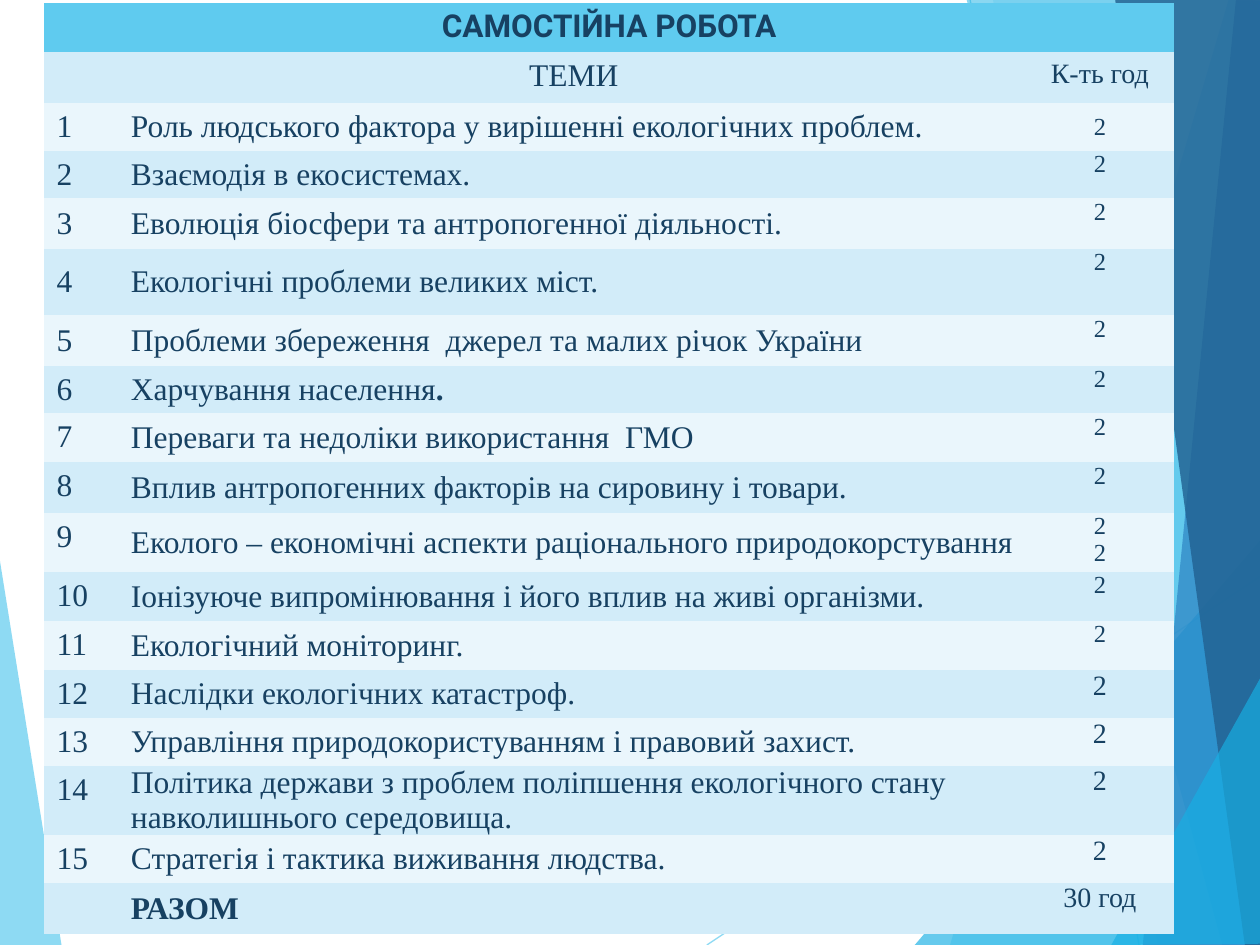
from dataclasses import dataclass

import lxml.etree
import pptx
import pptx.dml.color
import pptx.enum.shapes
import pptx.enum.text
import pptx.oxml.ns
import pptx.util

RGBColor = pptx.dml.color.RGBColor
Align = pptx.enum.text.PP_ALIGN
Anchor = pptx.enum.text.MSO_ANCHOR
qn = pptx.oxml.ns.qn

SKY = RGBColor(0x5F, 0xCB, 0xEF)
CYAN = RGBColor(0x17, 0xB0, 0xE4)
BLUE = RGBColor(0x2E, 0x83, 0xC3)
NAVY = RGBColor(0x22, 0x62, 0x92)
INK = RGBColor(0x17, 0x41, 0x62)
BAND_DARK = RGBColor(0xD2, 0xEC, 0xF9)
BAND_LIGHT = RGBColor(0xEA, 0xF6, 0xFC)

GRID_COLUMNS, GRID_ROWS = 1000, 750
UNIT = pptx.util.Inches(10) // GRID_COLUMNS
SERIF = "Times New Roman"
PLAIN_STYLE = "{2D5ABB26-0587-4C30-8999-92F81FD0307C}"
COLUMN_WIDTHS = (62, 717, 118)
HEADER_HEIGHTS = (16, 34)
TOTAL_HEIGHT = 31
TABLE_HEIGHT = 760


@dataclass(frozen=True)
class Facet:
    points: tuple[tuple[int, int], ...]
    color: RGBColor
    opacity: int


@dataclass(frozen=True)
class Ray:
    start: tuple[int, int]
    end: tuple[int, int]


@dataclass(frozen=True)
class Span:
    text: str
    size: int = 18
    bold: bool = False
    font: str = SERIF


@dataclass(frozen=True)
class Topic:
    title: str
    height: int
    hours: tuple[str, ...] = ("2",)
    hours_size: int = 14
    ending: str = ""
    align: Align | None = Align.JUSTIFY


FACETS = (
    Facet(((-1, 439), (49, 751), (-1, 750)), SKY, 70),
    Facet(((975, 0), (754, 750), (1002, 751), (1001, 1)), SKY, 36),
    Facet(((788, -1), (919, 750), (1001, 750), (1001, -1)), SKY, 20),
    Facet(((726, 750), (1000, 429), (1001, 750)), CYAN, 66),
    Facet(((767, -1), (970, 750), (1001, 749), (1001, -1)), CYAN, 50),
    Facet(((981, -1), (907, 750), (1001, 750), (1000, -1)), BLUE, 70),
    Facet(((885, -1), (988, 750), (1002, 750), (1000, -1)), NAVY, 82),
    Facet(((882, 750), (1002, 535), (1002, 749)), CYAN, 66),
)
RAYS = (Ray((561, 750), (1001, 457)), Ray((770, 0), (904, 750)))

TOPICS = (
    Topic("Роль людського фактора у вирішенні екологічних проблем.", 37),
    Topic("Взаємодія в екосистемах.", 31),
    Topic("Еволюція біосфери та антропогенної діяльності.", 40),
    Topic("Екологічні проблеми великих міст.", 53),
    Topic("Проблеми збереження  джерел та малих річок України", 40),
    Topic("Харчування населення", 22, ending="."),
    Topic("Переваги та недоліки використання  ГМО", 39),
    Topic("Вплив антропогенних факторів на сировину і товари.", 40),
    Topic("Еколого – економічні аспекти раціонального природокорстування", 47,
          hours=("2", "2"), align=None),
    Topic("Іонізуюче випромінювання і його вплив на живі організми.", 39),
    Topic("Екологічний моніторинг.", 39, align=None),
    Topic("Наслідки екологічних катастроф.", 38, hours_size=16, align=None),
    Topic("Управління природокористуванням і правовий захист.", 37,
          hours_size=16, align=None),
    Topic("Політика держави з проблем поліпшення екологічного стану "
          "навколишнього середовища.", 31, hours_size=16, align=None),
    Topic("Стратегія і тактика виживання людства.", 31, hours_size=16, align=None),
)
SPACED_TOPICS = 5


def set_opacity(properties, percent: int) -> None:
    color = next(properties.iter(qn("a:srgbClr")))
    lxml.etree.SubElement(color, qn("a:alpha"), val=str(percent * 1000))


def draw_facet(page, facet: Facet) -> None:
    builder = page.shapes.build_freeform(*facet.points[0], scale=UNIT)
    builder.add_line_segments(facet.points[1:], close=True)
    shape = builder.convert_to_shape()
    shape.shadow.inherit = False
    shape.fill.solid()
    shape.fill.fore_color.rgb = facet.color
    shape.line.fill.background()
    set_opacity(shape.element.spPr, facet.opacity)


def draw_ray(page, ray: Ray) -> None:
    ends = [value * UNIT for value in (*ray.start, *ray.end)]
    line = page.shapes.add_connector(pptx.enum.shapes.MSO_CONNECTOR.STRAIGHT, *ends)
    line.line.color.rgb = SKY
    line.line.width = pptx.util.Pt(0.75)
    properties = line.element.spPr
    set_opacity(properties, 70)
    lxml.etree.SubElement(properties, qn("a:effectLst"))


def write_cell(cell, lines: list[list[Span]], align: Align | None = None,
               middle: bool = False, tight: bool = False, after: int = 0) -> None:
    if middle:
        cell.vertical_anchor = Anchor.MIDDLE
    if tight:
        cell.margin_left = cell.margin_right = pptx.util.Inches(0.07)
        cell.margin_top = cell.margin_bottom = 0
    frame = cell.text_frame
    for index, spans in enumerate(lines):
        para = frame.add_paragraph() if index else frame.paragraphs[0]
        para.alignment = align
        if after:
            para.space_after = pptx.util.Pt(after)
        for span in spans:
            run = para.add_run()
            run.text = span.text
            run.font.size = pptx.util.Pt(span.size)
            run.font.bold = span.bold
            run.font.name = span.font
            run.font.color.rgb = INK


def write_topic(table, number: int, topic: Topic) -> None:
    row = number + 1
    spaced = number <= SPACED_TOPICS
    after = 10 if spaced else 0
    title = [Span(topic.title)]
    if topic.ending:
        title.append(Span(topic.ending, bold=True))
    hours = [[Span(text, topic.hours_size)] for text in topic.hours]
    write_cell(table.cell(row, 0), [[Span(str(number))]], middle=spaced)
    write_cell(table.cell(row, 1), [title], topic.align, True, True, after)
    first = number == 1
    write_cell(table.cell(row, 2), hours, Align.CENTER, first, True, after if first else 0)


def draw_table(page) -> None:
    heights = (*HEADER_HEIGHTS, *(topic.height for topic in TOPICS), TOTAL_HEIGHT)
    holder = page.shapes.add_table(
        len(heights), len(COLUMN_WIDTHS), 35 * UNIT, 2 * UNIT,
        sum(COLUMN_WIDTHS) * UNIT, TABLE_HEIGHT * UNIT)
    table = holder.table
    table.first_row = table.horz_banding = False
    next(holder.element.iter(qn("a:tableStyleId"))).text = PLAIN_STYLE
    for column, width in zip(table.columns, COLUMN_WIDTHS):
        column.width = width * UNIT
    for index, (row, height) in enumerate(zip(table.rows, heights)):
        row.height = height * UNIT
        band = BAND_DARK if index % 2 else BAND_LIGHT
        for cell in row.cells:
            cell.fill.solid()
            cell.fill.fore_color.rgb = band if index else SKY
    holder.height = TABLE_HEIGHT * UNIT

    table.cell(0, 0).merge(table.cell(0, 2))
    write_cell(table.cell(0, 0), [[Span("САМОСТІЙНА РОБОТА", bold=True, font="Roboto")]],
               Align.CENTER)
    write_cell(table.cell(1, 1), [[Span("ТЕМИ")]], Align.CENTER)
    write_cell(table.cell(1, 2), [[Span("К-ть год", 16)]], Align.CENTER)
    for number, topic in enumerate(TOPICS, 1):
        write_topic(table, number, topic)
    last = len(heights) - 1
    write_cell(table.cell(last, 1), [[Span("РАЗОМ", bold=True)]], middle=True, tight=True)
    write_cell(table.cell(last, 2), [[Span("30 год", 16)]], Align.CENTER, tight=True)


def main() -> None:
    deck = pptx.Presentation()
    deck.slide_width = GRID_COLUMNS * UNIT
    deck.slide_height = GRID_ROWS * UNIT
    page = deck.slides.add_slide(deck.slide_layouts[6])
    draw_facet(page, FACETS[0])
    for ray in RAYS:
        draw_ray(page, ray)
    for facet in FACETS[1:]:
        draw_facet(page, facet)
    draw_table(page)
    deck.save("out.pptx")


if __name__ == "__main__":
    main()
